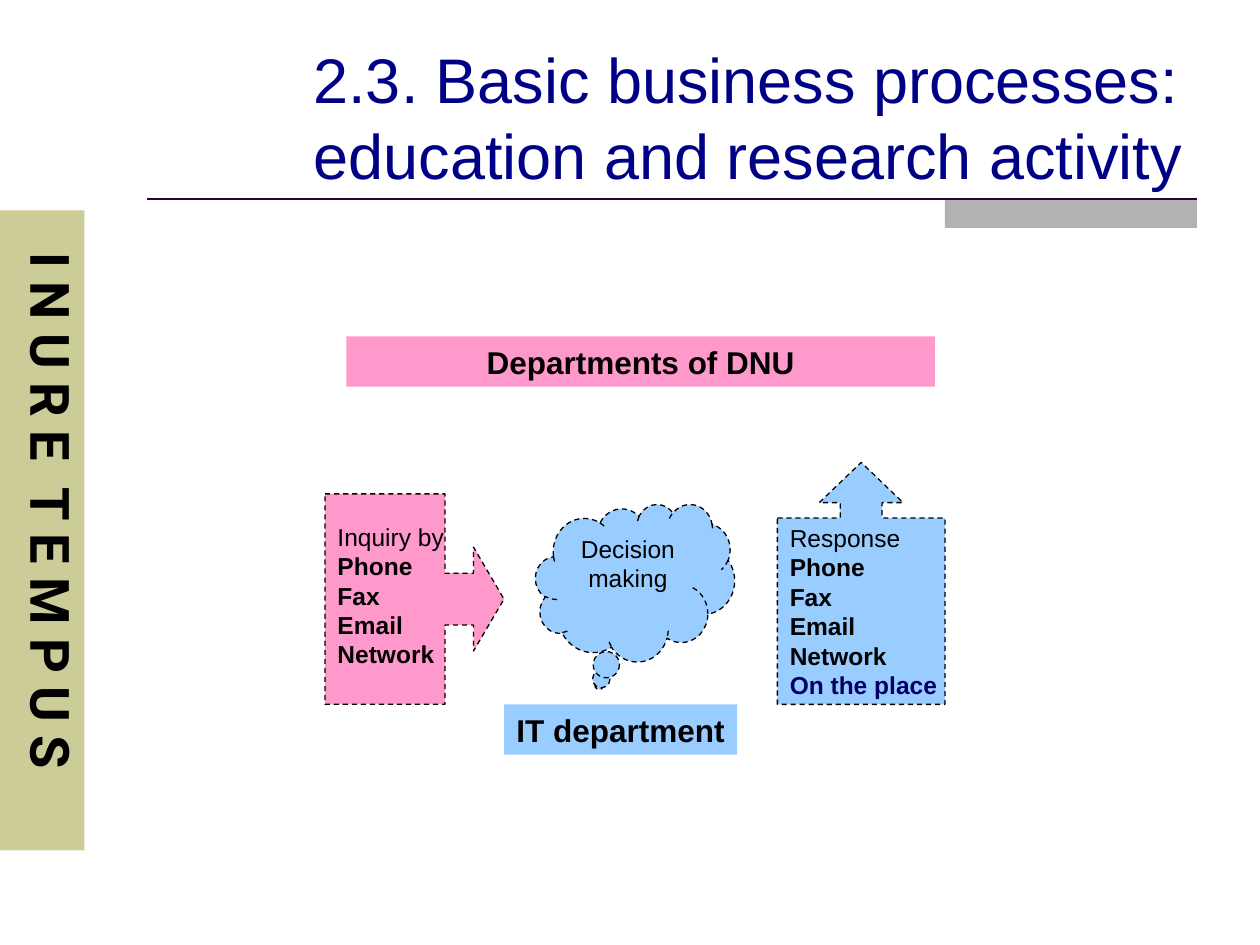
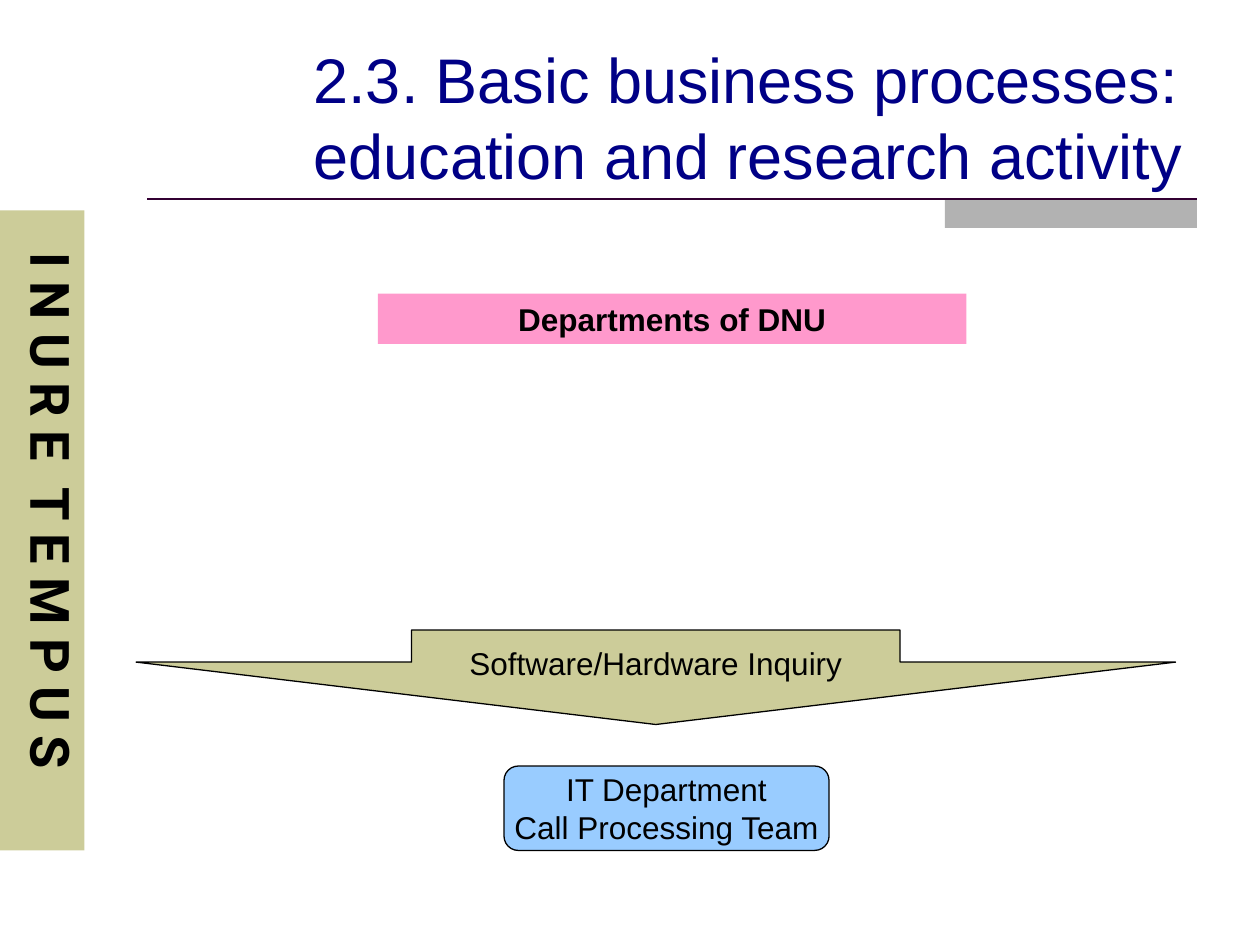
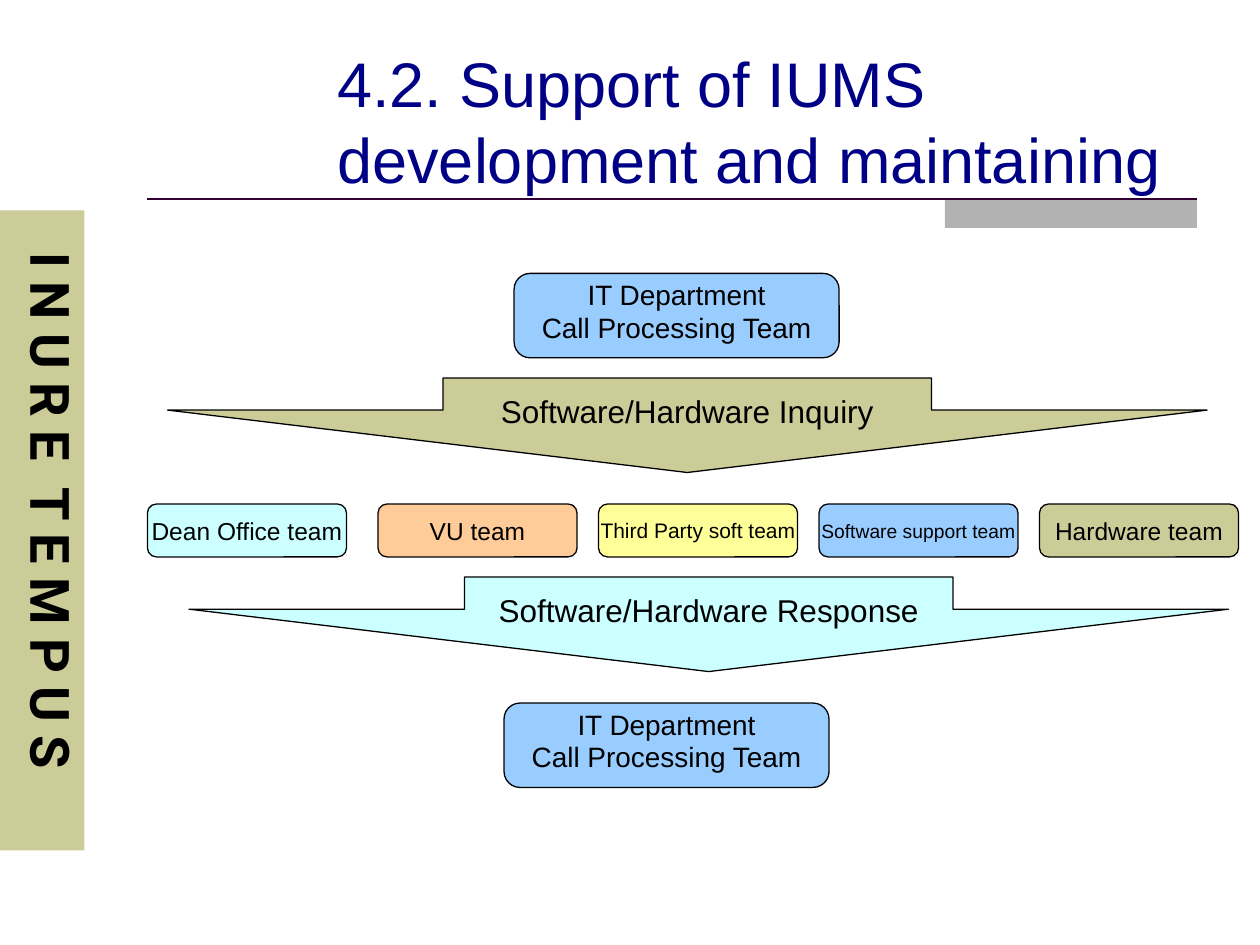
from dataclasses import dataclass

from lxml import etree
from pptx import Presentation
from pptx.dml.color import RGBColor
from pptx.enum.dml import MSO_LINE
from pptx.enum.shapes import MSO_CONNECTOR, MSO_SHAPE
from pptx.enum.text import MSO_ANCHOR, PP_ALIGN
from pptx.oxml.ns import qn
from pptx.util import Inches, Pt

RECTANGLE = MSO_SHAPE.RECTANGLE
ROUNDED = MSO_SHAPE.ROUNDED_RECTANGLE
DOWN_ARROW = MSO_SHAPE.DOWN_ARROW
RIGHT_CALLOUT = MSO_SHAPE.RIGHT_ARROW_CALLOUT
UP_CALLOUT = MSO_SHAPE.UP_ARROW_CALLOUT
CLOUD = MSO_SHAPE.CLOUD_CALLOUT
STRAIGHT = MSO_CONNECTOR.STRAIGHT
DASH = MSO_LINE.DASH
TOP, MIDDLE = MSO_ANCHOR.TOP, MSO_ANCHOR.MIDDLE
LEFT, CENTER = PP_ALIGN.LEFT, PP_ALIGN.CENTER


@dataclass(frozen=True)
class Theme:
    font: str = "Arial"
    band_font: str = "Roboto"
    black: str = "000000"
    title: str = "000086"
    navy: str = "000066"
    rule: str = "330033"
    gray: str = "B2B2B2"
    olive: str = "CCCC99"
    blue: str = "99CCFF"
    pink: str = "FF99CC"
    aqua: str = "CCFFFF"
    orange: str = "FFCC99"
    yellow: str = "FFFF99"
    title_size: float = 36
    band_size: float = 31
    label_size: float = 18
    team_size: float = 16
    body_size: float = 14
    small_size: float = 12
    tiny_size: float = 11
    outline: float = 0.75
    rule_width: float = 1.5


THEME = Theme()


def color(value):
    return RGBColor.from_string(value)


def inches(box):
    return [Inches(length) for length in box]


def add_run(paragraph, text, size, bold=False, text_color=THEME.black, font=THEME.font):
    run = paragraph.add_run()
    run.text = text
    run.font.name = font
    run.font.size = Pt(size)
    run.font.bold = bold
    run.font.color.rgb = color(text_color)
    return run


def write(shape, lines, size, align=CENTER, anchor=MIDDLE, wrap=False, bold=False,
          line_spacing=None, gap=0):
    frame = shape.text_frame
    frame.word_wrap = wrap
    frame.vertical_anchor = anchor
    for index, line in enumerate(lines):
        paragraph = frame.add_paragraph() if index else frame.paragraphs[0]
        paragraph.alignment = align
        if line_spacing:
            paragraph.line_spacing = line_spacing
        if index and gap:
            paragraph.space_before = Pt(gap)
        text, style = line if isinstance(line, tuple) else (line, {"bold": bold})
        add_run(paragraph, text, size, **style)


def add_block(slide, kind, box, fill, adjustments=(), outlined=True, dash=None):
    shape = slide.shapes.add_shape(kind, *inches(box))
    shape.shadow.inherit = False
    shape.fill.solid()
    shape.fill.fore_color.rgb = color(fill)
    if outlined:
        shape.line.color.rgb = color(THEME.black)
        shape.line.width = Pt(THEME.outline)
        if dash:
            shape.line.dash_style = dash
    else:
        shape.line.fill.background()
    for index, value in enumerate(adjustments):
        shape.adjustments[index] = value
    return shape


def add_side_band(slide, box):
    left, top, width, height = box
    add_block(slide, RECTANGLE, box, THEME.olive, outlined=False)
    label_box = (left, top + 0.16, width + 0.05, height - 0.33)
    frame = slide.shapes.add_textbox(*inches(label_box)).text_frame
    frame.word_wrap = True
    frame.margin_top = Inches(0.17)
    frame._txBody.bodyPr.set("vert", "eaVert")
    paragraph = frame.paragraphs[0]
    for text in ("I N U R E", " ", "T E M P U S"):
        run = add_run(paragraph, text, THEME.band_size, True, font=THEME.band_font)
        if text == " ":
            run.font._element.set("spc", "770")


def add_title_rule(slide, box):
    left, top, width, height = box
    tab_width = 2
    tab_box = (left + width - tab_width, top, tab_width, height)
    add_block(slide, RECTANGLE, tab_box, THEME.gray, outlined=False)
    rule = slide.shapes.add_connector(STRAIGHT, *inches((left, top, left + width, top)))
    rule.line.color.rgb = color(THEME.rule)
    rule.line.width = Pt(THEME.rule_width)
    etree.SubElement(rule._element.spPr, qn("a:effectLst"))


def add_title(slide, box, text):
    title = slide.shapes.add_textbox(*inches(box))
    write(title, [(text, {"text_color": THEME.title})], THEME.title_size, LEFT, wrap=True)


def add_framed_slide(presentation, title, title_box):
    slide = presentation.slides.add_slide(presentation.slide_layouts[6])
    add_side_band(slide, (0, 1.67, 0.67, 5.08))
    add_title_rule(slide, (1.17, 1.58, 8.33, 0.23))
    add_title(slide, title_box, title)
    return slide


def add_banner(slide, box, text, fill, wrap=True):
    banner = add_block(slide, RECTANGLE, box, fill, outlined=False)
    write(banner, [text], THEME.label_size, anchor=TOP, wrap=wrap, bold=True)


def add_departments(slide, left, top):
    add_banner(slide, (left, top, 4.67, 0.4), "Departments of DNU", THEME.pink)


def add_wide_arrow(slide, left, top, text, fill):
    arrow = add_block(slide, DOWN_ARROW, (left, top, 8.25, 0.75), fill, (0.47, 0.66))
    write(arrow, [text], THEME.label_size)


def add_call_team(slide, left, top, rounding, size, **text_style):
    team = add_block(slide, ROUNDED, (left, top, 2.58, 0.67), THEME.blue, (rounding,))
    write(team, ["IT Department", "Call Processing Team"], size, **text_style)


def add_inquiry_flow(slide, box):
    left, top, width, height = box
    channels = [(name, {"bold": True}) for name in ("Phone", "Fax", "Email", "Network")]
    on_place = ("On the place", {"bold": True, "text_color": THEME.navy})

    add_banner(slide, (left + 1.42, top + height, 1.85, 0.4), "IT department",
               THEME.blue, wrap=False)
    inquiry = add_block(slide, RIGHT_CALLOUT, (left, top + 0.25, 1.42, height - 0.25),
                        THEME.pink, (0.29, 0.29, 0.17, 0.67), dash=DASH)
    write(inquiry, ["Inquiry by", *channels], THEME.body_size, LEFT)
    inquiry.text_frame.margin_bottom = Inches(0.11)
    cloud = add_block(slide, CLOUD, (left + 1.67, top + 0.33, 1.58, 1.25),
                      THEME.blue, (-0.18, 0.65), dash=DASH)
    write(cloud, ["Decision", "making"], THEME.body_size, anchor=TOP, wrap=True)
    response = add_block(slide, UP_CALLOUT, (left + width - 1.33, top, 1.33, height),
                         THEME.blue, (0.25, 0.25, 0.24, 0.77), dash=DASH)
    write(response, ["Response", *channels, on_place], THEME.body_size, LEFT)


def add_team_row(slide, box):
    left, top, width, height = box
    team_width, pitch = 1.58, 1.75
    teams = [
        ("Dean Office team", THEME.aqua, THEME.body_size),
        ("VU team", THEME.orange, THEME.body_size),
        ("Third Party soft team", THEME.yellow, THEME.small_size),
        ("Software support team", THEME.blue, THEME.tiny_size),
        ("Hardware team", THEME.olive, THEME.body_size),
    ]
    last_left = left + width - team_width
    for index, (name, fill, size) in enumerate(teams):
        team_left = last_left - pitch * (len(teams) - 1 - index) if index else left
        team = add_block(slide, ROUNDED, (team_left, top, team_width, height), fill, (0.17,))
        write(team, [name], size)


def build_process_slide(presentation):
    return add_framed_slide(
        presentation,
        "2.3. Basic business processes: education and research activity",
        (2.39, 0.3, 7.1, 1.25),
    )


def build_departments_slide(presentation):
    slide = build_process_slide(presentation)
    add_inquiry_flow(slide, (2.58, 3.67, 4.92, 1.92))
    add_departments(slide, 2.75, 2.67)


def build_inquiry_slide(presentation):
    slide = build_process_slide(presentation)
    add_wide_arrow(slide, 1.08, 5, "Software/Hardware Inquiry", THEME.olive)
    add_call_team(slide, 4, 6.08, 0.17, THEME.label_size)
    add_departments(slide, 3, 2.33)


def build_support_slide(presentation):
    slide = add_framed_slide(
        presentation,
        "4.2. Support of IUMS development and maintaining",
        (2.58, 0.33, 7.1, 1.25),
    )
    compact = {"anchor": TOP, "wrap": True, "line_spacing": 0.8, "gap": 3.2}
    add_call_team(slide, 4.08, 2.17, 0.19, THEME.team_size, **compact)
    add_wide_arrow(slide, 1.33, 3, "Software/Hardware Inquiry", THEME.olive)
    add_team_row(slide, (1.17, 4, 8.66, 0.42))
    add_wide_arrow(slide, 1.5, 4.58, "Software/Hardware Response", THEME.aqua)
    add_call_team(slide, 4, 5.58, 0.19, THEME.team_size, **compact)


def main():
    presentation = Presentation()
    presentation.slide_width = Inches(10)
    presentation.slide_height = Inches(7.5)
    build_departments_slide(presentation)
    build_inquiry_slide(presentation)
    build_support_slide(presentation)
    presentation.save("out.pptx")


if __name__ == "__main__":
    main()
